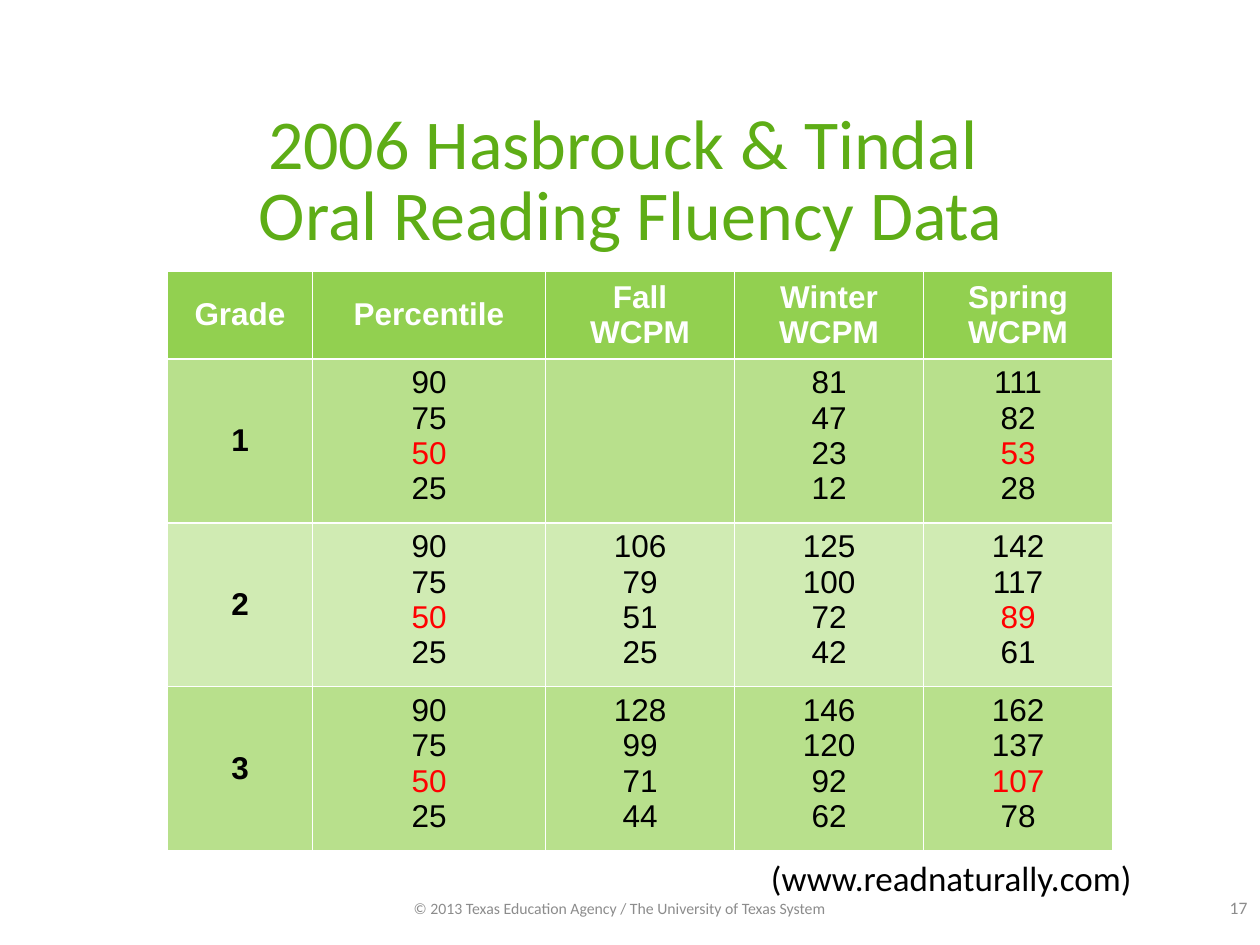
from pptx import Presentation
from pptx.dml.color import RGBColor
from pptx.enum import text as t
from pptx.util import Inches, Pt

GREEN, GREY, BLACK, WHITE, RED = "5EAD16", "8C8C8C", "000000", "FFFFFF", "FF0000"
HEADER_FILL, BAND_FILLS = "92D050", ("B8E08C", "D0EBB3")
CENTER, RIGHT = t.PP_ALIGN.CENTER, t.PP_ALIGN.RIGHT
MIDDLE, TOP = t.MSO_ANCHOR.MIDDLE, t.MSO_ANCHOR.TOP

HEADINGS = ["Grade", "Percentile", "Fall\nWCPM", "Winter\nWCPM", "Spring\nWCPM"]
PERCENTILES = [90, 75, 50, 25]
# Grade: fall, winter and spring scores, one for each percentile
SCORES = {
    1: ([], [81, 47, 23, 12], [111, 82, 53, 28]),
    2: ([106, 79, 51, 25], [125, 100, 72, 42], [142, 117, 89, 61]),
    3: ([128, 99, 71, 44], [146, 120, 92, 62], [162, 137, 107, 78]),
}
MEDIAN_LINE = PERCENTILES.index(50)
COLUMN_WIDTHS = [1.15, 1.85, 1.5, 1.5, 1.5]
ROW_HEIGHTS = [0.7, 1.3, 1.3, 1.3]


def rgb(value):
    return RGBColor.from_string(value)


def style(paragraph, size, color, font="Calibri", align=CENTER, bold=False):
    paragraph.alignment = align
    paragraph.font.name = font
    paragraph.font.size = Pt(size)
    paragraph.font.bold = bold
    paragraph.font.color.rgb = rgb(color)


def add_title(slide, wording):
    title = slide.shapes.title
    title.left, title.top = Inches(0.17), Inches(0.83)
    title.width, title.height = Inches(9.67), Inches(1.25)
    frame = title.text_frame
    frame.auto_size = t.MSO_AUTO_SIZE.NONE
    frame.vertical_anchor = MIDDLE
    heading = frame.paragraphs[0]
    heading.text = wording
    heading.line_spacing = 0.85
    style(heading, 40, GREEN)


def add_label(slide, wording, box, size, color, align=CENTER, anchor=MIDDLE):
    frame = slide.shapes.add_textbox(*map(Inches, box)).text_frame
    frame.word_wrap = True
    frame.vertical_anchor = anchor
    frame.text = wording
    style(frame.paragraphs[0], size, color, align=align)


def fill_cell(cell, lines, fill, color=BLACK, bold=False, anchor=MIDDLE, red_line=None):
    cell.fill.solid()
    cell.fill.fore_color.rgb = rgb(fill)
    cell.vertical_anchor = anchor
    cell.text = "\n".join(map(str, lines))
    for i, paragraph in enumerate(cell.text_frame.paragraphs):
        style(paragraph, 18, RED if i == red_line else color, "Arial", bold=bold)


def add_fluency_table(slide):
    table = slide.shapes.add_table(
        len(ROW_HEIGHTS), len(COLUMN_WIDTHS), Inches(1.33), Inches(2.15),
        Inches(sum(COLUMN_WIDTHS)), Inches(sum(ROW_HEIGHTS))).table
    for column, width in zip(table.columns, COLUMN_WIDTHS):
        column.width = Inches(width)
    for row, height in zip(table.rows, ROW_HEIGHTS):
        row.height = Inches(height)

    for col, heading in enumerate(HEADINGS):
        fill_cell(table.cell(0, col), [heading], HEADER_FILL, WHITE, bold=True)

    # Percentile and spring columns mark the median in red
    marked = (HEADINGS.index("Percentile"), len(HEADINGS) - 1)
    for row, (grade, seasons) in enumerate(SCORES.items(), start=1):
        fill = BAND_FILLS[(row - 1) % 2]
        fill_cell(table.cell(row, 0), [grade], fill, bold=True)
        for col, values in enumerate((PERCENTILES, *seasons), start=1):
            fill_cell(table.cell(row, col), values, fill, anchor=TOP,
                      red_line=MEDIAN_LINE if col in marked else None)


def main():
    prs = Presentation()
    prs.slide_width, prs.slide_height = Inches(10), Inches(7.5)
    slide = prs.slides.add_slide(prs.slide_layouts[5])

    add_title(slide, "2006 Hasbrouck & Tindal \vOral Reading Fluency Data")
    add_fluency_table(slide)

    # Source, copyright and page number
    add_label(slide, "(www.readnaturally.com)", (0.5, 6.75, 8.58, 0.43), 20, BLACK,
              RIGHT, TOP)
    add_label(slide, "© 2013 Texas Education Agency / The University of Texas System",
              (2.08, 7.08, 5.67, 0.25), 9, GREY)
    add_label(slide, "17", (9.58, 7.07, 0.5, 0.27), 10, GREY)

    prs.save("out.pptx")


if __name__ == "__main__":
    main()
